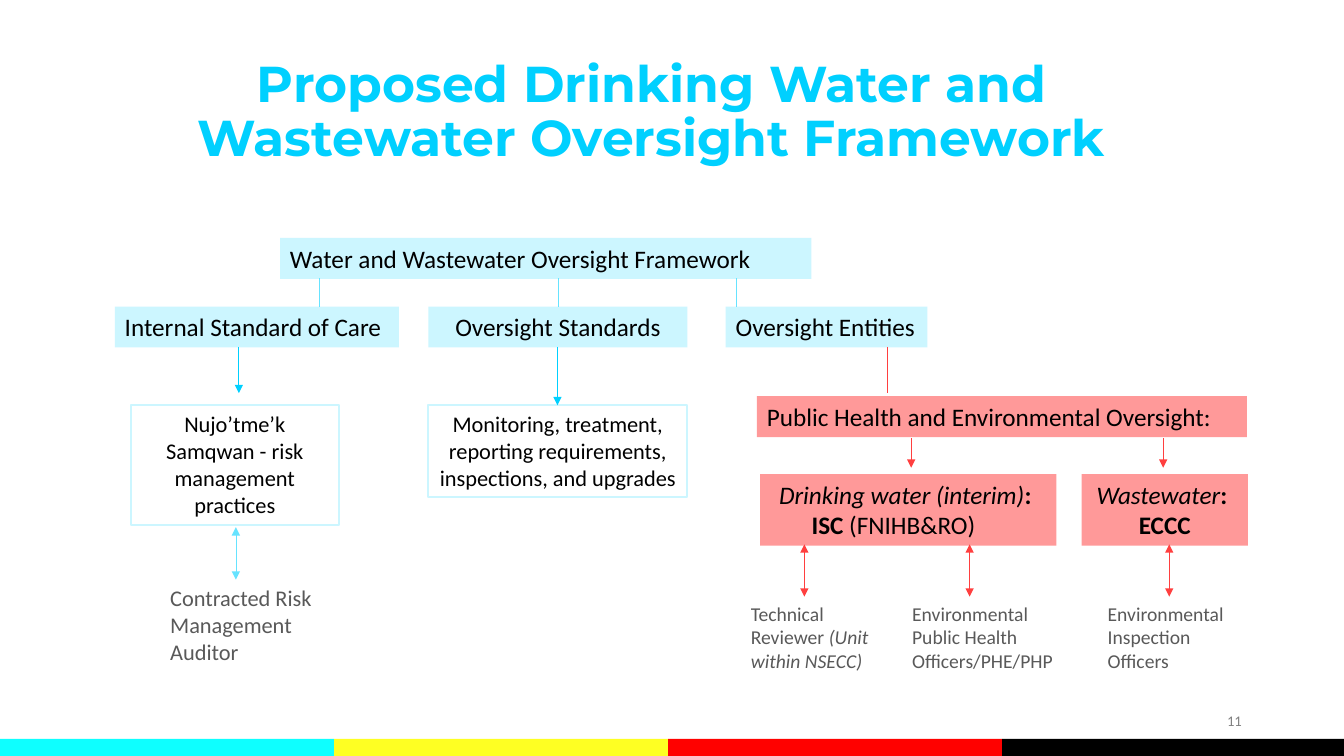
from lxml import etree
from pptx import Presentation
from pptx.dml.color import RGBColor
from pptx.enum.shapes import MSO_CONNECTOR, MSO_SHAPE
from pptx.enum.text import MSO_ANCHOR, MSO_AUTO_SIZE, PP_ALIGN
from pptx.oxml.ns import qn
from pptx.util import Pt

LEFT, CENTER, RIGHT = PP_ALIGN.LEFT, PP_ALIGN.CENTER, PP_ALIGN.RIGHT
RECTANGLE, STRAIGHT = MSO_SHAPE.RECTANGLE, MSO_CONNECTOR.STRAIGHT
MIDDLE, TOP = MSO_ANCHOR.MIDDLE, MSO_ANCHOR.TOP

SLIDE_WIDTH, SLIDE_HEIGHT = 960, 540
STRIPE_WIDTH, STRIPE_HEIGHT = 238.6, 12.2
LINE_FACTOR, VERTICAL_INSETS = 1.22, 7.2

COLORS = {
    "cyan": "0EFFFF", "yellow": "FEFF23", "red": "FF0100", "black": "000000",
    "title": "00D0FF", "pale": "CCF6FF", "sky": "66E3FF", "rose": "FF9999",
    "coral": "FF3F3F", "gray": "595959", "number": "808080",
}
STRIPES = ["cyan", "yellow", "red", "black"]
TITLE_LINES = ["Proposed Drinking Water and ", "Wastewater Oversight Framework "]
PAGE_NUMBER = "11"

STYLES = {
    "branch": {"fill": "pale", "line": None, "size": 18, "color": "black"},
    "oversight": {"fill": "rose", "line": None, "size": 18, "color": "black"},
    "detail": {"fill": None, "line": "pale", "size": 16, "color": "black"},
    "auditor": {"fill": None, "line": None, "size": 16, "color": "gray"},
    "officer": {"fill": None, "line": None, "size": 14, "color": "gray"},
}

ROOT_TOP, BRANCH_TOP, DETAIL_TOP = 170, 219, 289.5
HEALTH_TOP, BODY_TOP, OFFICER_TOP = 283, 338.6, 426.2

# style, left, top, width, line count, alignment, paragraphs of (text, emphasis)
BOXES = [
    ("branch", 200, ROOT_TOP, 379.6, 1, LEFT, [[("Water and Wastewater Oversight Framework", "")]]),
    ("branch", 82, BRANCH_TOP, 203, 1, LEFT, [[("Internal Standard of Care", "")]]),
    ("branch", 306, BRANCH_TOP, 185, 1, CENTER, [[("Oversight Standards", "")]]),
    ("branch", 518.4, BRANCH_TOP, 144, 1, LEFT, [[("Oversight Entities", "")]]),
    ("detail", 93.6, DETAIL_TOP, 148.3, 4, CENTER,
     [[("Nujo’tme’k Samqwan - risk management practices", "")]]),
    ("detail", 306, DETAIL_TOP, 185, 3, CENTER,
     [[("Monitoring, treatment, reporting requirements, inspections, and upgrades", "")]]),
    ("auditor", 114.5, 414, 118.8, 3, LEFT, [[("Contracted Risk Management Auditor", "")]]),
    ("oversight", 540.7, HEALTH_TOP, 350, 1, LEFT,
     [[("Public Health and Environmental Oversight:", "")]]),
    ("oversight", 542.9, BODY_TOP, 211.7, 2, CENTER,
     [[("Drinking water (interim)", "i"), (": ", "b")], [("ISC ", "b"), ("(FNIHB&RO)", "")]]),
    ("oversight", 772.6, BODY_TOP, 118.8, 2, CENTER,
     [[("Wastewater", "i"), (": ", "b")], [("ECCC", "b")]]),
    ("officer", 529.2, OFFICER_TOP, 115.2, 3, LEFT,
     [[("Technical Reviewer ", ""), ("(Unit within NSECC)", "i")]]),
    ("officer", 644.4, OFFICER_TOP, 118.8, 3, LEFT,
     [[("Environmental Public Health Officers/PHE/PHP", "")]]),
    ("officer", 784.1, OFFICER_TOP, 118.8, 3, LEFT,
     [[("Environmental Inspection Officers", "")]]),
]
ISC_BOX, ISC_RIGHT_MARGIN = 8, 21

ONE_WAY, BOTH_WAYS = ["tailEnd"], ["headEnd", "tailEnd"]
# colour, x positions, top, bottom, arrowheads
LINKS = [
    ("sky", [228.2, 398.9, 526.3], 198.7, BRANCH_TOP, []),
    ("title", [170.6], 247.7, 280.8, ONE_WAY),
    ("title", [398.2], 247.7, DETAIL_TOP, ONE_WAY),
    ("sky", [168.5], 376.6, 414, BOTH_WAYS),
    ("coral", [633.6], 247.7, 280.8, []),
    ("coral", [650.9, 830.9], 313.2, 334.1, ONE_WAY),
    ("coral", [574.6, 692.6, 835.2], 388.8, OFFICER_TOP, BOTH_WAYS),
]


def rgb(name):
    return RGBColor.from_string(COLORS[name])


def add_run(paragraph, text, font, size, color, emphasis=""):
    run = paragraph.add_run()
    run.text = text
    run.font.name = font
    run.font.size = Pt(size)
    run.font.color.rgb = rgb(color)
    run.font.bold = "b" in emphasis
    run.font.italic = "i" in emphasis


def add_rectangle(slide, left, top, width, height, fill, line=None):
    shape = slide.shapes.add_shape(RECTANGLE, Pt(left), Pt(top), Pt(width), Pt(height))
    shape.shadow.inherit = False
    if fill:
        shape.fill.solid()
        shape.fill.fore_color.rgb = rgb(fill)
    else:
        shape.fill.background()
    if line:
        shape.line.color.rgb = rgb(line)
        shape.line.width = Pt(1.5)
    else:
        shape.line.fill.background()
    return shape


def add_box(slide, style_name, left, top, width, line_count, alignment, paragraphs):
    style = STYLES[style_name]
    height = line_count * style["size"] * LINE_FACTOR + VERTICAL_INSETS
    if style["fill"] or style["line"]:
        shape = add_rectangle(slide, left, top, width, height, style["fill"], style["line"])
    else:
        shape = slide.shapes.add_textbox(Pt(left), Pt(top), Pt(width), Pt(height))
    frame = shape.text_frame
    frame.word_wrap = True
    frame.vertical_anchor = TOP
    for index, runs in enumerate(paragraphs):
        paragraph = frame.add_paragraph() if index else frame.paragraphs[0]
        paragraph.alignment = alignment
        for text, emphasis in runs:
            add_run(paragraph, text, "Calibri", style["size"], style["color"], emphasis)
    return shape


def add_link(slide, color, x, top, bottom, arrowheads):
    connector = slide.shapes.add_connector(STRAIGHT, Pt(x), Pt(top), Pt(x), Pt(bottom))
    connector.line.color.rgb = rgb(color)
    connector.line.width = Pt(0.5)
    properties = connector._element.spPr
    outline = properties.find(qn("a:ln"))
    for end in arrowheads:
        etree.SubElement(outline, qn("a:" + end), type="triangle")
    etree.SubElement(properties, qn("a:effectLst"))


def add_title(slide):
    title = slide.shapes.title
    title.left, title.top, title.width, title.height = Pt(47.5), Pt(28.8), Pt(846), Pt(104.4)
    frame = title.text_frame
    frame.word_wrap = True
    frame.auto_size = MSO_AUTO_SIZE.NONE
    frame.vertical_anchor = MIDDLE
    paragraph = frame.paragraphs[0]
    paragraph.alignment = CENTER
    paragraph.line_spacing = 0.9
    for index, line in enumerate(TITLE_LINES):
        if index:
            paragraph.add_line_break()
        add_run(paragraph, line, "Montserrat", 36, "title", "b")


def add_page_number(slide):
    frame = slide.shapes.add_textbox(Pt(678.2), Pt(500.4), Pt(216), Pt(28.8)).text_frame
    frame.word_wrap = True
    frame.vertical_anchor = MIDDLE
    frame.paragraphs[0].alignment = RIGHT
    add_run(frame.paragraphs[0], PAGE_NUMBER, "Calibri", 10.5, "number")


def main():
    presentation = Presentation()
    presentation.slide_width, presentation.slide_height = Pt(SLIDE_WIDTH), Pt(SLIDE_HEIGHT)
    slide = presentation.slides.add_slide(presentation.slide_layouts[5])
    for index, color in enumerate(STRIPES):
        left = index * STRIPE_WIDTH
        width = SLIDE_WIDTH - left if index == len(STRIPES) - 1 else STRIPE_WIDTH
        add_rectangle(slide, left, SLIDE_HEIGHT - STRIPE_HEIGHT, width, STRIPE_HEIGHT, color)
    add_title(slide)
    add_page_number(slide)
    boxes = [add_box(slide, *box) for box in BOXES]
    isc_paragraph = boxes[ISC_BOX].text_frame.paragraphs[1]
    isc_paragraph._p.get_or_add_pPr().set("marR", str(Pt(ISC_RIGHT_MARGIN)))
    for color, positions, top, bottom, arrowheads in LINKS:
        for x in positions:
            add_link(slide, color, x, top, bottom, arrowheads)
    presentation.save("out.pptx")


if __name__ == "__main__":
    main()
